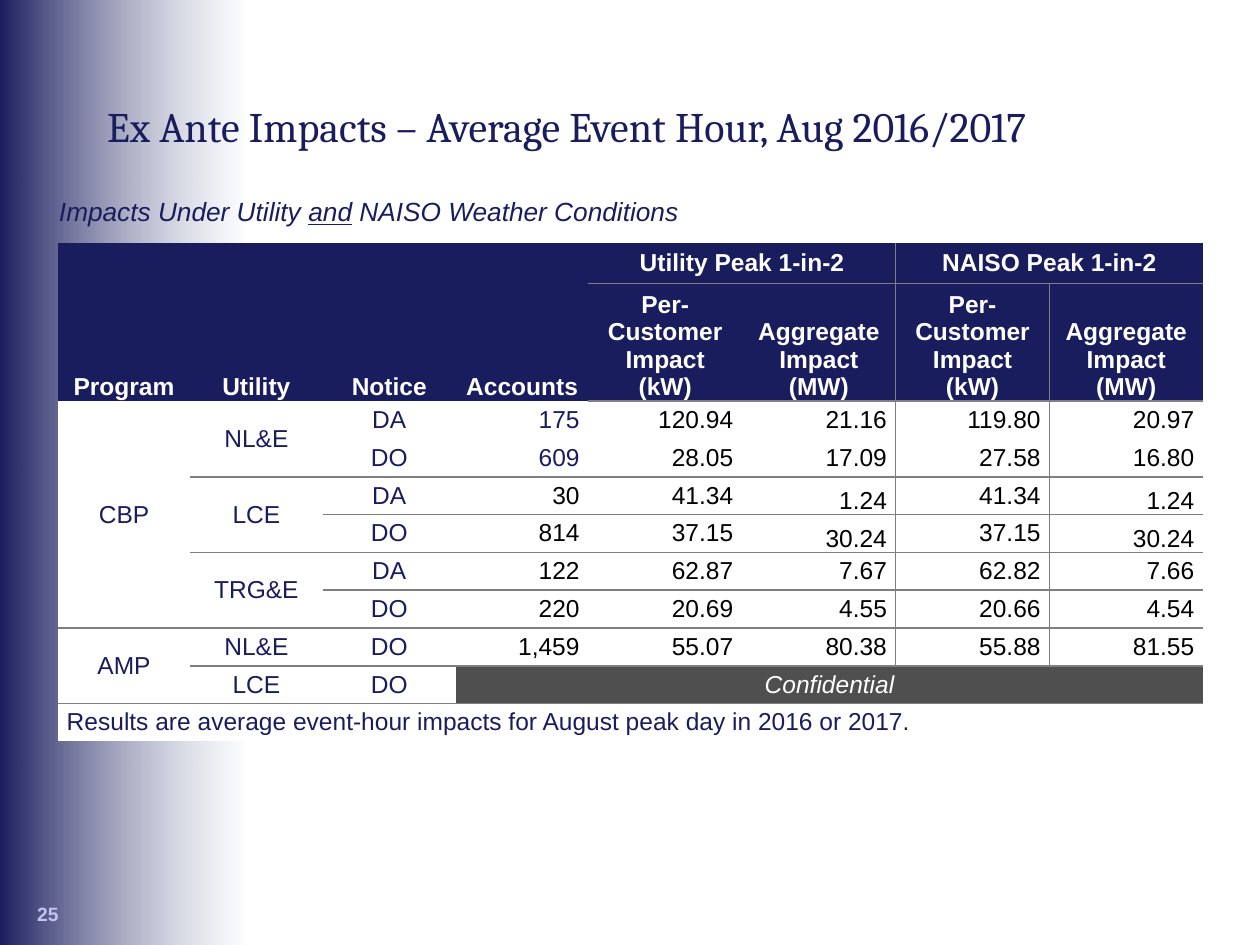
"""Build the ex ante impacts slide with its summary table."""
from dataclasses import dataclass
from typing import Optional

from lxml import etree
from pptx import Presentation
from pptx import util as u
from pptx.dml.color import RGBColor
from pptx.enum import shapes, text
from pptx.oxml.ns import qn

COLORS = {
    "navy": "1A1D5D", "pale": "F7FAFD", "lilac": "C2C4EE", "white": "FFFFFF",
    "black": "000000", "rule": "7F7F7F", "gray": "4F4F4F",
}
PLAIN_TABLE_STYLE = "{2D5ABB26-0587-4C30-8999-92F81FD0307C}"
COLUMN_WIDTHS = [1.05, 1.05, 1.06, 1.05] + [1.22] * 4
ROW_HEIGHTS = [0.32, 0.93] + [0.3] * 9
LAST_ROW = len(ROW_HEIGHTS) - 1
RULE_STARTS = {1: 4, 4: 1, 6: 1, 8: 0, LAST_ROW: 0}
MEASURES = ["Per-Customer Impact (kW)", "Aggregate Impact (MW)"]
HEADINGS = ["Program", "Utility", "Notice", "Accounts"] + MEASURES * 2
CENTER, RIGHT, LEFT = text.PP_ALIGN.CENTER, text.PP_ALIGN.RIGHT, text.PP_ALIGN.LEFT
MIDDLE, BOTTOM, TOP = (text.MSO_ANCHOR.MIDDLE, text.MSO_ANCHOR.BOTTOM,
                       text.MSO_ANCHOR.TOP)


@dataclass
class Result:
    notice: str
    values: tuple = ()
    accounts_color: str = "black"
    aggregate_anchor: text.MSO_ANCHOR = MIDDLE


@dataclass
class Group:
    row: int
    col: int
    label: str
    rows: int = 1
    cols: int = 1
    color: str = "navy"
    fill: str = "white"
    bold: bool = False
    italic: bool = False
    align: text.PP_ALIGN = CENTER


RESULTS = [
    Result("DA", ("175", "120.94", "21.16", "119.80", "20.97"), "navy"),
    Result("DO", ("609", "28.05", "17.09", "27.58", "16.80"), "navy"),
    Result("DA", ("30", "41.34", "1.24", "41.34", "1.24"), aggregate_anchor=BOTTOM),
    Result("DO", ("814", "37.15", "30.24", "37.15", "30.24"), aggregate_anchor=BOTTOM),
    Result("DA", ("122", "62.87", "7.67", "62.82", "7.66")),
    Result("DO", ("220", "20.69", "4.55", "20.66", "4.54")),
    Result("DO", ("1,459", "55.07", "80.38", "55.88", "81.55")),
    Result("DO"),
]
GROUPS = [
    Group(0, 4, "Utility Peak 1-in-2", cols=2, color="white", fill="navy", bold=True),
    Group(0, 6, "NAISO Peak 1-in-2", cols=2, color="white", fill="navy", bold=True),
    Group(2, 0, "CBP", rows=6),
    Group(2, 1, "NL&E", rows=2),
    Group(4, 1, "LCE", rows=2),
    Group(6, 1, "TRG&E", rows=2),
    Group(8, 0, "AMP", rows=2),
    Group(8, 1, "NL&E"),
    Group(9, 1, "LCE"),
    Group(9, 3, "Confidential", cols=5, color="white", fill="gray", italic=True),
    Group(LAST_ROW, 0, "Results are average event-hour impacts for August peak day "
          "in 2016 or 2017.", cols=8, align=LEFT),
]


def rgb(name: str) -> RGBColor:
    return RGBColor.from_string(COLORS[name])


def style(font, size: float, color: str, face: str = "Arial",
          bold: bool = False, italic: bool = False) -> None:
    font.name, font.size, font.color.rgb = face, u.Pt(size), rgb(color)
    font.bold, font.italic = bold, italic


def write_cell(cell, label: str, color: str, bold: bool = False, italic: bool = False,
               align: text.PP_ALIGN = CENTER, anchor: text.MSO_ANCHOR = MIDDLE,
               fill: Optional[str] = None) -> None:
    p = cell.text_frame.paragraphs[0]
    if label:
        p.add_run().text = label
    p.alignment = align
    style(p.font, 14, color, bold=bold, italic=italic)
    cell.vertical_anchor = anchor
    if fill:
        cell.fill.solid()
        cell.fill.fore_color.rgb = rgb(fill)


def add_borders(cell, row: int, col: int) -> None:
    edges = {
        "lnL": col == 6 and row <= 8,
        "lnR": col == 5 and row <= 8,
        "lnT": col >= RULE_STARTS.get(row, 8),
        "lnB": col >= RULE_STARTS.get(row + 1, 8),
    }
    tc_pr = cell._tc.get_or_add_tcPr()
    for tag, shown in edges.items():
        if shown:
            line = etree.SubElement(tc_pr, qn(f"a:{tag}"), w=str(u.Pt(1)))
            fill = etree.SubElement(line, qn("a:solidFill"))
            etree.SubElement(fill, qn("a:srgbClr"), val=COLORS["rule"])


def add_side_band(s) -> None:
    sp = s.shapes.add_shape(shapes.MSO_SHAPE.RECTANGLE, 0, 0, u.Inches(1.94), u.Inches(7.5))
    sp.shadow.inherit = False
    sp.line.fill.background()
    sp.fill.gradient()
    sp.fill.gradient_angle = 180
    for stop, name, position in zip(sp.fill.gradient_stops, ("pale", "navy"), (0, 1)):
        stop.color.rgb = rgb(name)
        stop.position = position
    pale = sp._element.spPr.find(".//" + qn("a:srgbClr"))
    etree.SubElement(pale, qn("a:alpha"), val="46000")
    s.shapes._spTree.insert(2, sp._element)


def add_title(s) -> None:
    sp = s.shapes.title
    sp.left, sp.top, sp.width, sp.height = map(u.Inches, (0.75, 0.75, 8.5, 0.75))
    tf = sp.text_frame
    tf.text = "Ex Ante Impacts – Average Event Hour, Aug 2016/2017"
    tf.vertical_anchor = TOP
    p = tf.paragraphs[0]
    p.alignment = LEFT
    style(p.font, 24, "navy", "Cambria")


def add_page_number(s) -> None:
    tf = s.shapes.add_textbox(*map(u.Inches, (0.27, 7.12, 0.22, 0.26))).text_frame
    tf.margin_left = tf.margin_right = tf.margin_top = tf.margin_bottom = 0
    tf.vertical_anchor = MIDDLE
    p = tf.paragraphs[0]
    p.text, p.alignment = "25", CENTER
    style(p.font, 11, "lilac", bold=True)


def add_subtitle(s) -> None:
    tf = s.shapes.add_textbox(*map(u.Inches, (0.37, 1.5, 6.3, 0.35))).text_frame
    tf.word_wrap = True
    p = tf.paragraphs[0]
    for part in ("Impacts Under Utility ", "and", " NAISO Weather Conditions"):
        r = p.add_run()
        r.text = part
        r.font.underline = True if part == "and" else None
    style(p.font, 15, "navy", italic=True)


def add_impact_table(s) -> None:
    frame = s.shapes.add_table(len(ROW_HEIGHTS), len(COLUMN_WIDTHS), u.Inches(0.46),
                               u.Inches(1.93), u.Inches(sum(COLUMN_WIDTHS)),
                               u.Inches(sum(ROW_HEIGHTS)))
    table = frame.table
    table.first_row = table.horz_banding = False
    table._tbl.tblPr.find(qn("a:tableStyleId")).text = PLAIN_TABLE_STYLE
    for column, width in zip(table.columns, COLUMN_WIDTHS):
        column.width = u.Inches(width)
    for row, height in enumerate(ROW_HEIGHTS):
        table.rows[row].height = u.Inches(height)
        for col in range(len(COLUMN_WIDTHS)):
            cell = table.cell(row, col)
            cell.margin_left = cell.margin_right = u.Inches(0.07)
            cell.margin_top = cell.margin_bottom = 0
            add_borders(cell, row, col)
            write_cell(cell, "", "navy", fill="navy" if row < 2 else "white")
    for col, heading in enumerate(HEADINGS):
        write_cell(table.cell(1, col), heading, "white", bold=True, anchor=BOTTOM)
    for row, result in enumerate(RESULTS, start=2):
        write_cell(table.cell(row, 2), result.notice, "navy")
        for col, value in enumerate(result.values, start=3):
            write_cell(table.cell(row, col), value,
                       result.accounts_color if col == 3 else "black", align=RIGHT,
                       anchor=result.aggregate_anchor if col in (5, 7) else MIDDLE)
    for g in GROUPS:
        cell = table.cell(g.row, g.col)
        if g.rows * g.cols > 1:
            cell.merge(table.cell(g.row + g.rows - 1, g.col + g.cols - 1))
        write_cell(cell, g.label, g.color, g.bold, g.italic, g.align, fill=g.fill)


def main() -> None:
    prs = Presentation()
    prs.slide_width, prs.slide_height = u.Inches(10), u.Inches(7.5)
    s = prs.slides.add_slide(prs.slide_layouts[5])
    add_side_band(s)
    add_page_number(s)
    add_title(s)
    add_impact_table(s)
    add_subtitle(s)
    prs.save("out.pptx")


if __name__ == "__main__":
    main()
